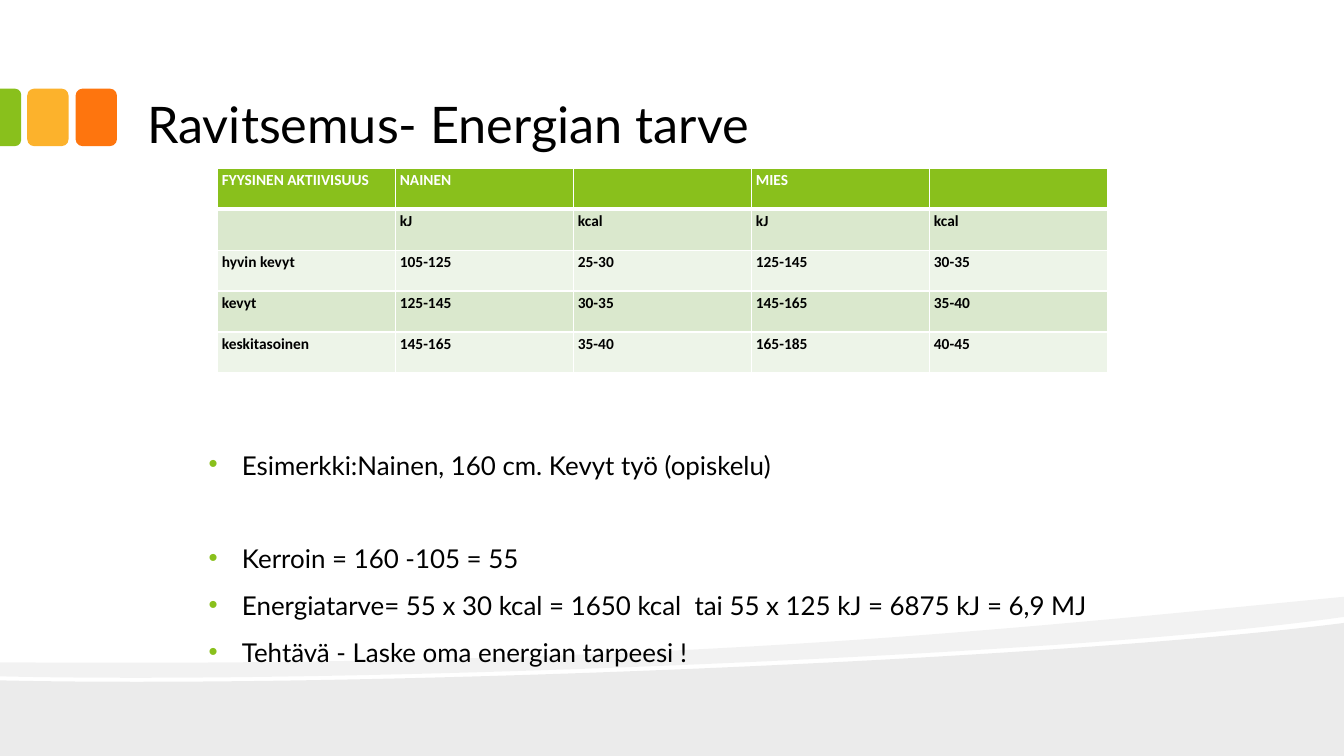
"""Build the slide on energy needs by physical activity."""
from lxml import etree
from pptx import Presentation, util as u
from pptx.dml.color import RGBColor
from pptx.enum import shapes, text
from pptx.oxml import ns

GREEN = RGBColor(0x89, 0xC0, 0x1C)
AMBER = RGBColor(0xFC, 0xB2, 0x2C)
ORANGE = RGBColor(0xFE, 0x75, 0x0E)
DARK_ROW = RGBColor(0xDA, 0xE8, 0xCD)
LIGHT_ROW = RGBColor(0xED, 0xF4, 0xE8)
BLACK = RGBColor(0, 0, 0)
WHITE = RGBColor(255, 255, 255)

ACTIVITY_ROWS = [
    ["FYYSINEN AKTIIVISUUS", "NAINEN", "", "MIES", ""],
    ["", "kJ", "kcal", "kJ", "kcal"],
    ["hyvin kevyt", "105-125", "25-30", "125-145", "30-35"],
    ["kevyt", "125-145", "30-35", "145-165", "35-40"],
    ["keskitasoinen", "145-165", "35-40", "165-185", "40-45"],
]
EXAMPLE_LINES = [
    ("Esimerkki:Nainen, 160 cm. Kevyt työ (opiskelu)", 0),
    ("Kerroin = 160 -105 = 55", 51.5),
    ("Energiatarve= 55 x 30 kcal = 1650 kcal  tai 55 x 125 kJ = 6875 kJ = 6,9 MJ", 18),
    ("Tehtävä - Laske oma energian tarpeesi !", 18),
]
LOWER_BAND = [
    [(13.33, 7.5)], [(0, 7.5)], [(0, 6.75)],
    [(3.52, 6.83), (10.42, 6.55), (13.33, 6.18)],
]
UPPER_BAND = [
    [(13.33, 5.92)], [(13.33, 6.12)],
    [(12.55, 6.23), (11.49, 6.33), (10.29, 6.41)],
    [(6.98, 6.63), (2.58, 6.77), (0, 6.71)],
    [(0, 6.57)],
    [(6.52, 6.62), (9.71, 6.27), (13.33, 5.92)],
]


def write(para, wording, size=18, font="Lato", color=BLACK, bold=False, spacing=1.0, before=0):
    para.alignment = text.PP_ALIGN.LEFT
    para.line_spacing = spacing
    para.space_before = u.Pt(before)
    span = para.add_run()
    span.text = wording
    span.font.size = u.Pt(size)
    span.font.name = font
    span.font.bold = bold
    span.font.color.rgb = color


def add_xml(parent, tag, **attributes):
    return etree.SubElement(parent, ns.qn(tag), attributes)


class SlideBuilder:
    def __init__(self, deck):
        self.slide = deck.slides.add_slide(deck.slide_layouts[1])
        self.shapes = self.slide.shapes

    def paint(self, shape, color):
        shape.shadow.inherit = False
        shape.fill.solid()
        shape.fill.fore_color.rgb = color
        shape.line.fill.background()

    def band(self, segments, opacity):
        points = [tuple(map(u.Inches, point)) for segment in segments for point in segment]
        builder = self.shapes.build_freeform(*points[0])
        builder.add_line_segments(points[1:], close=True)
        shape = builder.convert_to_shape()
        self.paint(shape, BLACK)
        properties = shape._element.spPr
        lines = iter(properties.findall(".//" + ns.qn("a:lnTo")))
        for segment in segments[1:]:
            strokes = [next(lines) for _ in segment]
            if len(strokes) == 3:
                bend = etree.Element(ns.qn("a:cubicBezTo"))
                strokes[0].addprevious(bend)
                for stroke in strokes:
                    bend.append(stroke[0])
                    stroke.getparent().remove(stroke)
        tint = properties.find(".//" + ns.qn("a:srgbClr"))
        add_xml(tint, "a:alpha", val=str(opacity * 1000))

    def block(self, kind, left, top, width, height, color, rotation=0, adjustments=()):
        shape = self.shapes.add_shape(kind, *map(u.Inches, (left, top, width, height)))
        self.paint(shape, color)
        shape.rotation = rotation
        for index, value in enumerate(adjustments):
            shape.adjustments[index] = value

    def placeholder(self, index, left, top, width, height, anchor, inset=0.07):
        box = self.slide.placeholders[index]
        self.shapes._spTree.append(box._element)
        box.left, box.top, box.width, box.height = map(u.Inches, (left, top, width, height))
        frame = box.text_frame
        frame.word_wrap = True
        frame.auto_size = text.MSO_AUTO_SIZE.NONE
        frame.vertical_anchor = anchor
        frame.margin_left = frame.margin_right = u.Inches(0.13)
        frame.margin_top = u.Inches(inset)
        frame.margin_bottom = u.Inches(0.07)
        return frame

    def title(self, wording):
        frame = self.placeholder(0, 1.33, 0.17, 10.66, 1.42, text.MSO_ANCHOR.BOTTOM)
        write(frame.paragraphs[0], wording, size=36)

    def bullets(self, lines):
        frame = self.placeholder(1, 1.94, 3.91, 9.29, 3.15, text.MSO_ANCHOR.TOP, inset=0.63)
        for index, (wording, before) in enumerate(lines):
            para = frame.add_paragraph() if index else frame.paragraphs[0]
            write(para, wording, size=18.5, spacing=0.7, before=before)
            properties = para._p.get_or_add_pPr()
            properties.set("marL", str(u.Inches(0.33)))
            properties.set("indent", str(u.Inches(-0.33)))
            add_xml(add_xml(properties, "a:buClr"), "a:srgbClr", val=str(GREEN))
            add_xml(properties, "a:buFont", typeface="Arial")
            add_xml(properties, "a:buChar", char="•")

    def borders(self, cell, bottom):
        properties = cell._tc.get_or_add_tcPr()
        sides = (("a:lnL", 1), ("a:lnR", 1), ("a:lnT", 1), ("a:lnB", bottom))
        for index, (side, width) in enumerate(sides):
            line = add_xml(properties, side, w=str(u.Pt(width)))
            add_xml(add_xml(line, "a:solidFill"), "a:srgbClr", val=str(WHITE))
            properties.insert(index, line)

    def table(self, rows, left, top, width, height):
        frame = self.shapes.add_table(len(rows), len(rows[0]),
                                      *map(u.Inches, (left, top, width, height)))
        for row, values in enumerate(rows):
            header = row == 0
            fill = GREEN if header else (DARK_ROW if row % 2 else LIGHT_ROW)
            for column, value in enumerate(values):
                cell = frame.table.cell(row, column)
                cell.margin_left = cell.margin_right = u.Inches(0.04)
                cell.margin_top = cell.margin_bottom = 0
                cell.fill.solid()
                cell.fill.fore_color.rgb = fill
                self.borders(cell, 3 if header else 1)
                if value:
                    write(cell.text_frame.paragraphs[0], value, size=11, font="Calibri",
                          color=WHITE if header else BLACK, bold=True, spacing=1.15)


def main():
    deck = Presentation()
    deck.slide_width, deck.slide_height = u.Inches(13.33), u.Inches(7.5)
    page = SlideBuilder(deck)
    page.band(LOWER_BAND, 8)
    page.band(UPPER_BAND, 5)
    kinds = shapes.MSO_SHAPE
    for left, color in ((0.75, ORANGE), (0.27, AMBER)):
        page.block(kinds.ROUNDED_RECTANGLE, left, 0.88, 0.41, 0.57, color)
    page.block(kinds.ROUND_2_SAME_RECTANGLE, -0.18, 1.06, 0.57, 0.21, GREEN,
               rotation=90, adjustments=(0.29, 0))
    page.title("Ravitsemus- Energian tarve")
    page.table(ACTIVITY_ROWS, 2.16, 1.67, 8.83, 2.03)
    page.bullets(EXAMPLE_LINES)
    deck.save("out.pptx")


if __name__ == "__main__":
    main()
